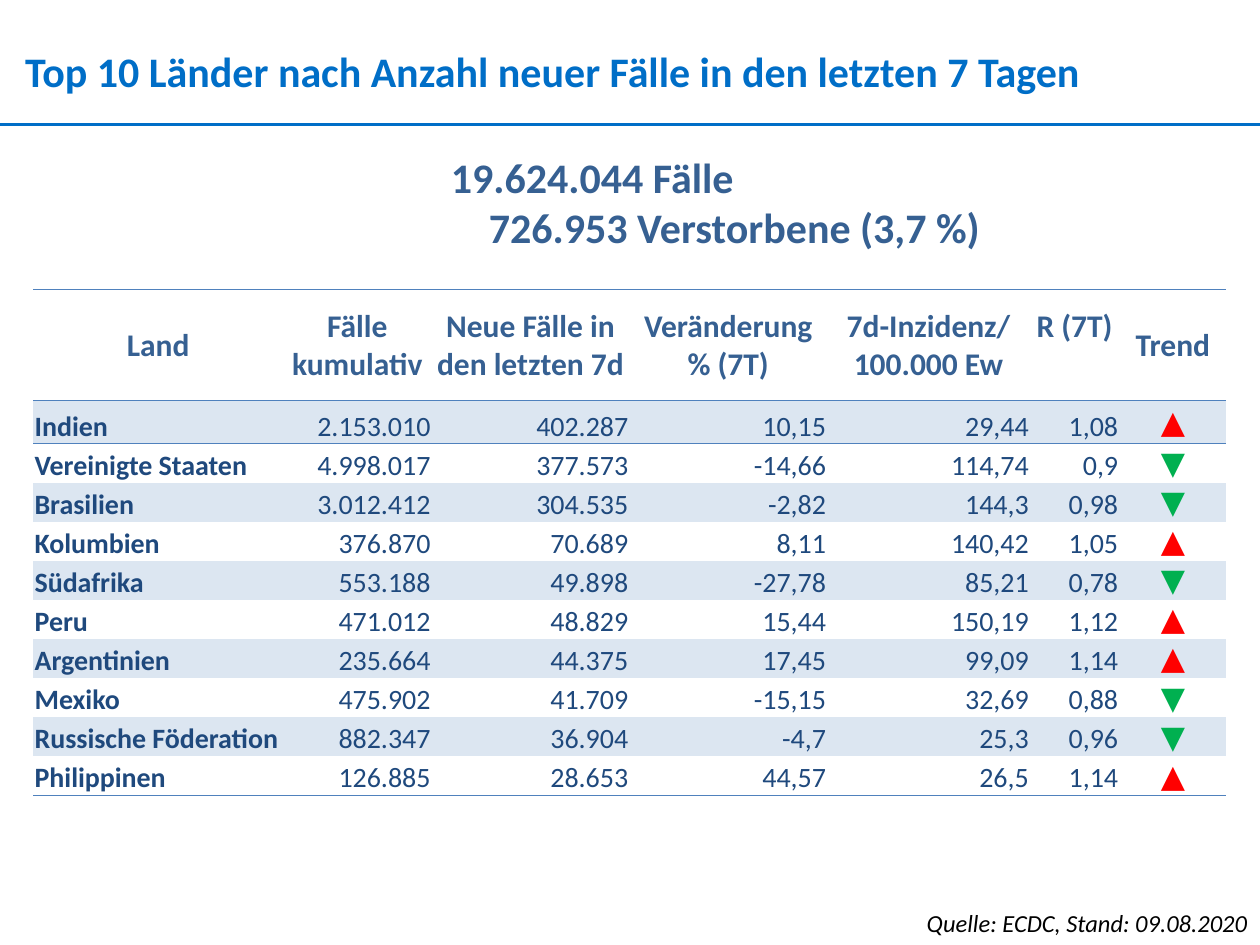
"""Builds the slide with the ten countries reporting the most new cases."""
from dataclasses import dataclass

import pptx
import pptx.dml.color
import pptx.enum.shapes
import pptx.enum.text
import pptx.oxml
import pptx.oxml.ns
import pptx.util

Pt = pptx.util.Pt
qn = pptx.oxml.ns.qn
ALIGN = pptx.enum.text.PP_ALIGN
ANCHOR = pptx.enum.text.MSO_ANCHOR


@dataclass(frozen=True)
class Theme:
    """Font, type sizes and colours of the slide."""
    font: str = "Calibri"
    title_size: float = 24
    header_size: float = 18
    body_size: float = 16
    source_size: float = 14
    title: str = "006EC7"
    heading: str = "366092"
    body: str = "1F497D"
    source: str = "000000"
    band: str = "DCE6F1"
    border: str = "4F81BD"
    rising: str = "FF0000"
    falling: str = "00B050"


THEME = Theme()
NO_GRID_STYLE = "{2D5ABB26-0587-4C30-8999-92F81FD0307C}"
COLUMN_WIDTHS = [142.6, 85, 113, 113, 115.9, 51.1, 61.2]
HEADER_HEIGHT, FIRST_HEIGHT, ROW_HEIGHT = 63.4, 24.5, 22.3
HEADERS = ["Land", "Fälle kumulativ", "Neue Fälle in den letzten 7d",
           "Veränderung % (7T)", "7d-Inzidenz/ 100.000 Ew", "R (7T)", "Trend"]
COUNTRIES = [
    ["Indien", "2.153.010", "402.287", "10,15", "29,44", "1,08", "▲"],
    ["Vereinigte Staaten", "4.998.017", "377.573", "-14,66", "114,74", "0,9", "▼"],
    ["Brasilien", "3.012.412", "304.535", "-2,82", "144,3", "0,98", "▼"],
    ["Kolumbien", "376.870", "70.689", "8,11", "140,42", "1,05", "▲"],
    ["Südafrika", "553.188", "49.898", "-27,78", "85,21", "0,78", "▼"],
    ["Peru", "471.012", "48.829", "15,44", "150,19", "1,12", "▲"],
    ["Argentinien", "235.664", "44.375", "17,45", "99,09", "1,14", "▲"],
    ["Mexiko", "475.902", "41.709", "-15,15", "32,69", "0,88", "▼"],
    ["Russische Föderation", "882.347", "36.904", "-4,7", "25,3", "0,96", "▼"],
    ["Philippinen", "126.885", "28.653", "44,57", "26,5", "1,14", "▲"],
]


def rgb(color):
    """Return the colour for a hex string."""
    return pptx.dml.color.RGBColor.from_string(color)


def style_text(tf, size, color, bold=False, italic=False, align=ALIGN.LEFT):
    """Format every paragraph and run of a text frame."""
    for p in tf.paragraphs:
        p.alignment = align
        for r in p.runs:
            r.font.name, r.font.size = THEME.font, Pt(size)
            r.font.bold, r.font.italic = bold, italic
            r.font.color.rgb = rgb(color)


def add_text(slide, box, text, wrap=True):
    """Add a text box that grows with its text and return its text frame."""
    tf = slide.shapes.add_textbox(*map(Pt, box)).text_frame
    tf.text = text
    tf.word_wrap = wrap
    tf.auto_size = pptx.enum.text.MSO_AUTO_SIZE.SHAPE_TO_FIT_TEXT
    return tf


def add_title(slide, box):
    """Place the title and the rule across the foot of the box."""
    left, top, width, height = box
    tf = add_text(slide, (left + 14.4, top + 25.9, width - 26.7, 28.8),
                  "Top 10 Länder nach Anzahl neuer Fälle in den letzten 7 Tagen")
    tf.margin_left = tf.margin_right = tf.margin_top = tf.margin_bottom = 0
    style_text(tf, THEME.title_size, THEME.title, bold=True)
    rule = slide.shapes.add_connector(
        pptx.enum.shapes.MSO_CONNECTOR.STRAIGHT,
        Pt(left), Pt(top + height), Pt(left + width), Pt(top + height))
    rule.line.color.rgb = rgb(THEME.title)
    rule.line.width = Pt(1.5)
    pptx.oxml.ns.qn("a:effectLst")
    rule._element.spPr.append(pptx.oxml.parse_xml(
        f'<a:effectLst {pptx.oxml.ns.nsdecls("a")}/>'))


def add_totals(slide, box):
    """Place the worldwide case and death counts."""
    tf = add_text(slide, box, "19.624.044 Fälle\n726.953 Verstorbene (3,7 %)", wrap=False)
    style_text(tf, THEME.title_size, THEME.heading, bold=True)
    tf.paragraphs[1]._p.get_or_add_pPr().set("marL", str(Pt(21.7)))


def add_source(slide, box):
    """Place the source line."""
    tf = add_text(slide, box, "Quelle: ECDC, Stand: 09.08.2020")
    style_text(tf, THEME.source_size, THEME.source, italic=True, align=ALIGN.RIGHT)


def add_border(cell, tag):
    """Draw one thin border on a cell; call for the top before the bottom."""
    cell._tc.get_or_add_tcPr().append(pptx.oxml.parse_xml(
        f'<a:{tag} {pptx.oxml.ns.nsdecls("a")} w="{Pt(0.5)}"><a:solidFill>'
        f'<a:srgbClr val="{THEME.border}"/></a:solidFill></a:{tag}>'))


def fill_cell(cell, text, row, col):
    """Write and format one cell according to its row and column."""
    cell.text = text
    cell.margin_left = cell.margin_right = cell.margin_top = Pt(0.7)
    cell.margin_bottom = 0
    if row <= 1:
        add_border(cell, "lnT")
    if row in (0, len(COUNTRIES)):
        add_border(cell, "lnB")
    if row % 2:
        cell.fill.solid()
        cell.fill.fore_color.rgb = rgb(THEME.band)
    else:
        cell.fill.background()
    is_trend = col == len(HEADERS) - 1
    cell.vertical_anchor = ANCHOR.MIDDLE if row == 0 or is_trend else ANCHOR.BOTTOM
    tf = cell.text_frame
    if row == 0:
        style_text(tf, THEME.header_size, THEME.heading, bold=True, align=ALIGN.CENTER)
    elif is_trend:
        color = THEME.rising if text == "▲" else THEME.falling
        style_text(tf, THEME.header_size, color, align=ALIGN.CENTER)
    else:
        style_text(tf, THEME.body_size, THEME.body, bold=col == 0,
                   align=ALIGN.RIGHT if col else ALIGN.LEFT)


def add_country_table(slide, box):
    """Place the country table, scaling its columns to the box width."""
    rows = [HEADERS] + COUNTRIES
    table = slide.shapes.add_table(len(rows), len(HEADERS), *map(Pt, box)).table
    table.first_row = table.horz_banding = False
    table._tbl.tblPr.find(qn("a:tableStyleId")).text = NO_GRID_STYLE
    scale = box[2] / sum(COLUMN_WIDTHS)
    for column, width in zip(table.columns, COLUMN_WIDTHS):
        column.width = Pt(width * scale)
    heights = [HEADER_HEIGHT, FIRST_HEIGHT] + [ROW_HEIGHT] * (len(rows) - 2)
    for i, (values, height) in enumerate(zip(rows, heights)):
        table.rows[i].height = Pt(height)
        for j, value in enumerate(values):
            fill_cell(table.cell(i, j), value, i, j)
    table.cell(0, HEADERS.index("R (7T)")).margin_bottom = Pt(22)


def main():
    """Build and save the slide."""
    prs = pptx.Presentation()
    prs.slide_width, prs.slide_height = Pt(720), Pt(540)
    slide = prs.slides.add_slide(prs.slide_layouts[6])
    add_title(slide, (0, 0, 720, 71.3))
    add_totals(slide, (250.6, 82.8, 319.7, 65.5))
    add_source(slide, (465.1, 515.5, 254.9, 24.5))
    add_country_table(slide, (19.1, 165.6, 681.8, 288.7))
    prs.save("out.pptx")


if __name__ == "__main__":
    main()
